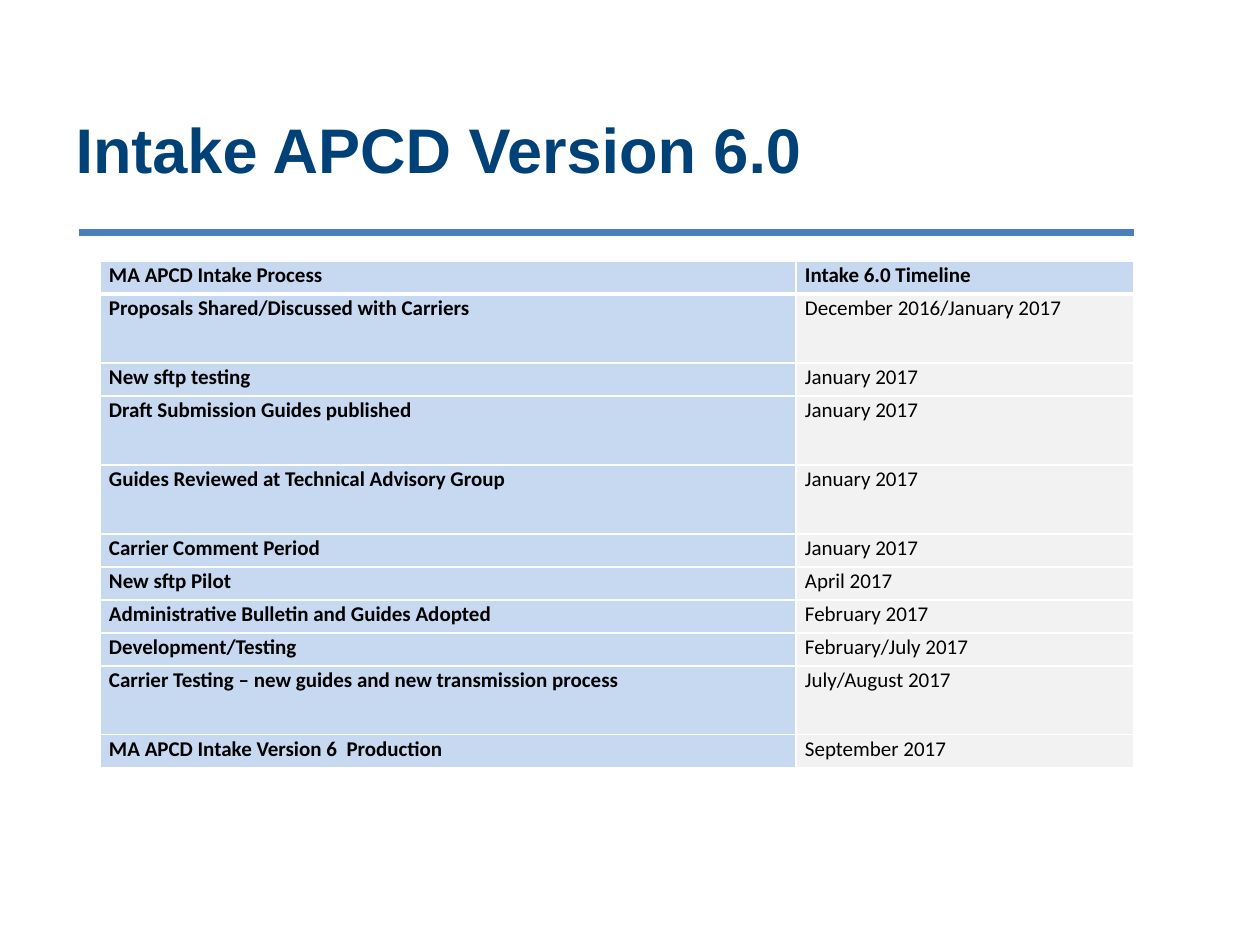
from dataclasses import dataclass

import pptx
import pptx.dml.color
import pptx.enum.shapes
import pptx.enum.text
import pptx.oxml
import pptx.oxml.ns
import pptx.util
from lxml import etree


@dataclass(frozen=True)
class Theme:
    title_color: str = "004178"
    rule_color: str = "4B7EBC"
    process_fill: str = "C6D9F1"
    date_fill: str = "F2F2F2"
    text_color: str = "000000"
    border_color: str = "FFFFFF"
    title_font: str = "Arial"
    table_font: str = "Calibri"
    title_size: int = 36
    table_size: int = 12
    rule_width: int = 4
    border_width: int = 1
    header_border_width: int = 3


@dataclass(frozen=True)
class Step:
    process: str
    date: str
    height: int


THEME = Theme()
SINGLE, DOUBLE = 33, 69
COLUMN_WIDTHS = (696, 338)
STEPS = (
    Step("MA APCD Intake Process", "Intake 6.0 Timeline", SINGLE),
    Step("Proposals Shared/Discussed with Carriers", "December 2016/January 2017", DOUBLE),
    Step("New sftp testing", "January 2017", SINGLE),
    Step("Draft Submission Guides published", "January 2017", DOUBLE),
    Step("Guides Reviewed at Technical Advisory Group", "January 2017", DOUBLE),
    Step("Carrier Comment Period", "January 2017", SINGLE),
    Step("New sftp Pilot", "April 2017", SINGLE),
    Step("Administrative Bulletin and Guides Adopted", "February 2017", SINGLE),
    Step("Development/Testing", "February/July 2017", SINGLE),
    Step("Carrier Testing – new guides and new transmission process", "July/August 2017", DOUBLE),
    Step("MA APCD Intake Version 6  Production", "September 2017", SINGLE),
)


def px(length: int) -> pptx.util.Emu:
    return pptx.util.Emu(round(length * 914400 / 126))


def rgb(color: str) -> pptx.dml.color.RGBColor:
    return pptx.dml.color.RGBColor.from_string(color)


def write_text(frame, text: str, *, font: str, size: int, color: str,
               bold: bool = False, spacing: float = 1.0) -> None:
    para = frame.paragraphs[0]
    para.alignment = pptx.enum.text.PP_ALIGN.LEFT
    para.line_spacing = spacing
    span = para.add_run()
    span.text = text
    span.font.name = font
    span.font.size = pptx.util.Pt(size)
    span.font.bold = bold
    span.font.color.rgb = rgb(color)


def add_title(page, text: str) -> None:
    box = page.shapes.title
    box.left, box.top, box.width, box.height = px(63), px(78), px(1071), px(140)
    box.text_frame.word_wrap = True
    box.text_frame.vertical_anchor = pptx.enum.text.MSO_ANCHOR.MIDDLE
    write_text(box.text_frame, text, font=THEME.title_font, size=THEME.title_size,
               color=THEME.title_color, bold=True)


def add_rule(page, left: int, right: int, top: int) -> None:
    rule = page.shapes.add_connector(
        pptx.enum.shapes.MSO_CONNECTOR.STRAIGHT, px(left), px(top), px(right), px(top))
    rule.line.color.rgb = rgb(THEME.rule_color)
    rule.line.width = pptx.util.Pt(THEME.rule_width)
    etree.SubElement(rule._element.spPr, pptx.oxml.ns.qn("a:effectLst"))


def set_borders(cell, row: int) -> None:
    widths = dict.fromkeys(("lnL", "lnR", "lnT", "lnB"), THEME.border_width)
    if row == 0:
        widths["lnB"] = THEME.header_border_width
    elif row == 1:
        widths["lnT"] = THEME.header_border_width
    properties = cell._tc.get_or_add_tcPr()
    for side, width in widths.items():
        properties.append(pptx.oxml.parse_xml(
            f'<a:{side} {pptx.oxml.ns.nsdecls("a")} w="{pptx.util.Pt(width)}">'
            f'<a:solidFill><a:srgbClr val="{THEME.border_color}"/></a:solidFill></a:{side}>'))


def fill_cell(cell, text: str, row: int, *, emphasized: bool) -> None:
    cell.margin_left = cell.margin_right = px(9)
    cell.margin_top = cell.margin_bottom = 0
    set_borders(cell, row)
    cell.fill.solid()
    cell.fill.fore_color.rgb = rgb(THEME.process_fill if emphasized else THEME.date_fill)
    write_text(cell.text_frame, text, font=THEME.table_font, size=THEME.table_size,
               color=THEME.text_color, bold=emphasized, spacing=1.07)


def add_timeline(page, left: int, top: int) -> None:
    height = sum(step.height for step in STEPS)
    table = page.shapes.add_table(
        len(STEPS), len(COLUMN_WIDTHS), px(left), px(top),
        px(sum(COLUMN_WIDTHS)), px(height)).table
    for column, width in zip(table.columns, COLUMN_WIDTHS):
        column.width = px(width)
    for row, step in enumerate(STEPS):
        table.rows[row].height = px(step.height)
        fill_cell(table.cell(row, 0), step.process, row, emphasized=True)
        fill_cell(table.cell(row, 1), step.date, row, emphasized=row == 0)


def main() -> None:
    """Build the intake timeline slide."""
    deck = pptx.Presentation()
    deck.slide_width, deck.slide_height = px(1260), px(945)
    page = deck.slides.add_slide(deck.slide_layouts.get_by_name("Title Only"))
    add_title(page, "Intake APCD Version 6.0")
    add_rule(page, 79, 1134, 233)
    add_timeline(page, 100, 261)
    deck.save("out.pptx")


if __name__ == "__main__":
    main()
